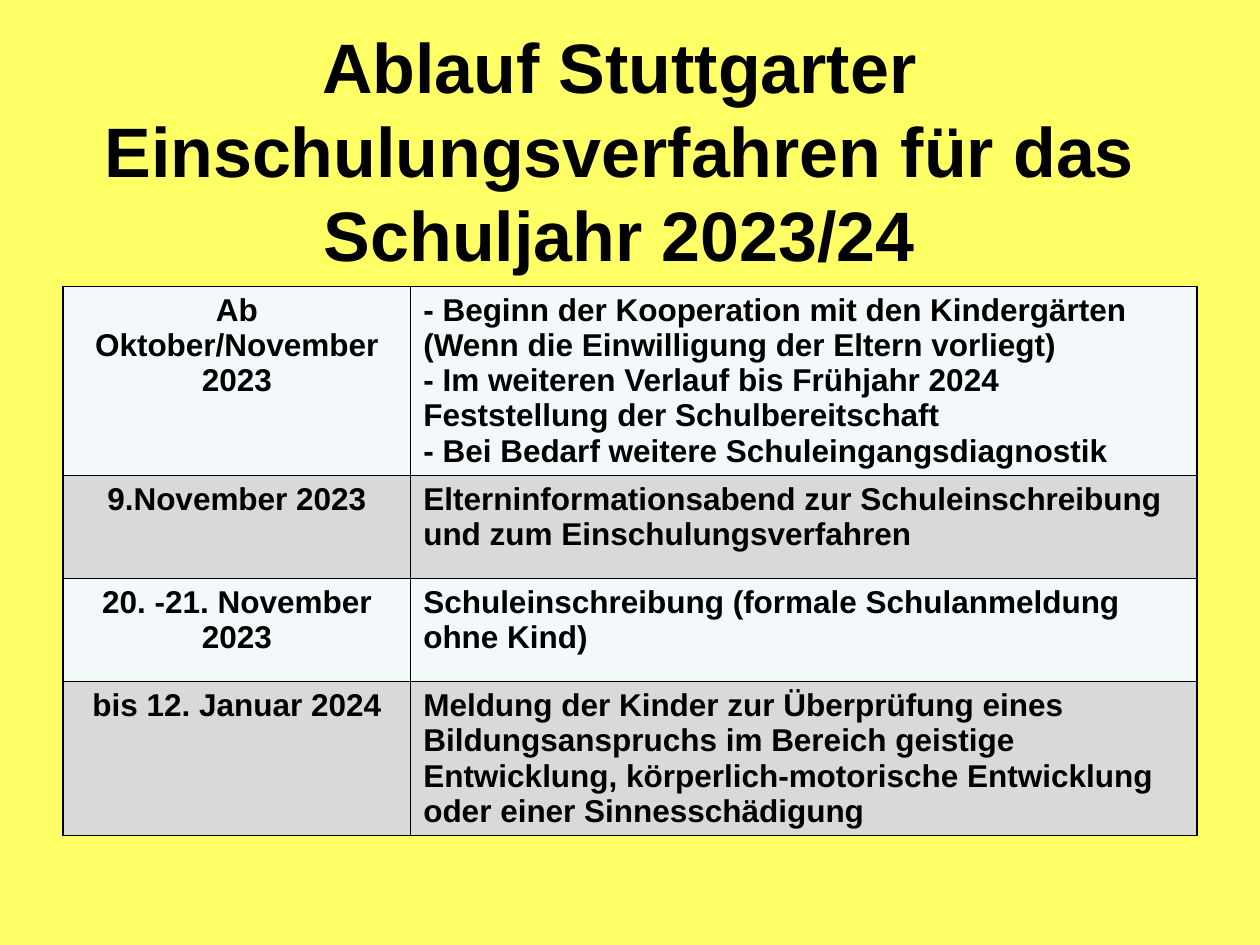
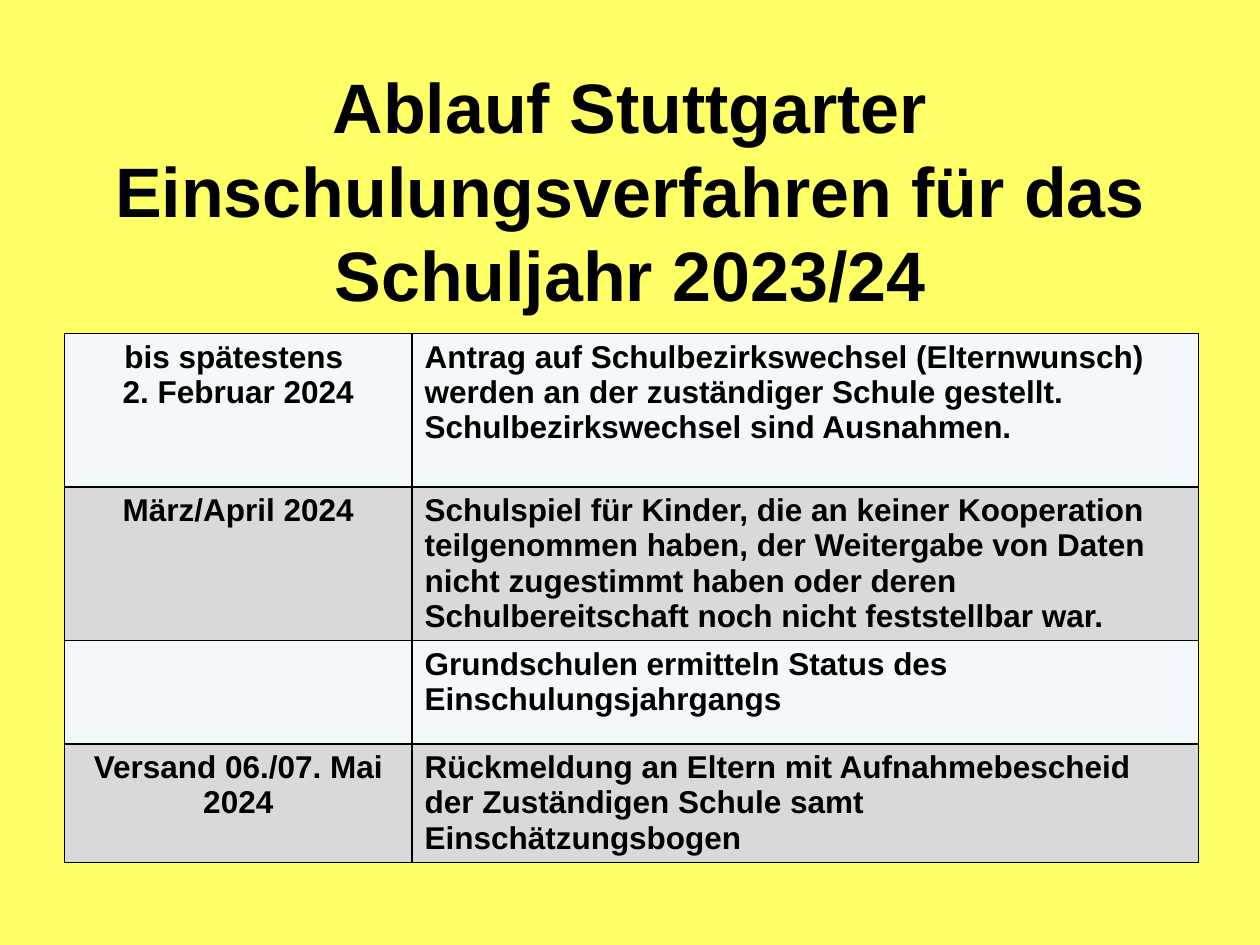
from dataclasses import dataclass

from lxml import etree
from pptx import Presentation
from pptx import util as u
from pptx.dml.color import RGBColor
from pptx.enum import text
from pptx.oxml.ns import qn


@dataclass(frozen=True)
class Theme:
    font: str = "Arial"
    background: RGBColor = RGBColor(0xFF, 0xFF, 0x66)
    ink: RGBColor = RGBColor(0, 0, 0)
    row_fills: tuple = (RGBColor(0xF3, 0xF9, 0xFA), RGBColor(0xD9, 0xD9, 0xD9))
    title_size: int = 40
    title_pitch: int = 48
    table_size: int = 18
    border: int = 1


THEME = Theme()
TITLE = "Ablauf Stuttgarter Einschulungsverfahren für das Schuljahr 2023/24"
TITLE_LEFT, TITLE_TOP, TITLE_INSET = 36, 21.6, 59
COLUMN_WIDTHS = (198.72, 449.28)
CENTER, LEFT = text.PP_ALIGN.CENTER, text.PP_ALIGN.LEFT

# Each row: height, date lines, paragraphs of the step
SCHEDULES = [
    {
        "title_size": (635.76, 72.72),
        "table_at": (36, 163.6),
        "rows": [
            (108, ["Ab Oktober/November 2023"], [
                "- Beginn der Kooperation mit den Kindergärten",
                "(Wenn die Einwilligung der Eltern vorliegt)",
                "- Im weiteren Verlauf bis Frühjahr 2024 Feststellung der Schulbereitschaft",
                "- Bei Bedarf weitere Schuleingangsdiagnostik"]),
            (59, ["9.November 2023"], [
                "Elterninformationsabend zur Schuleinschreibung und zum Einschulungsverfahren"]),
            (59, ["20. -21. November 2023"], [
                "Schuleinschreibung (formale Schulanmeldung ohne Kind)"]),
            (87.6, ["bis 12. Januar 2024"], [
                "Meldung der Kinder zur Überprüfung eines Bildungsanspruchs im Bereich geistige "
                "Entwicklung, körperlich-motorische Entwicklung oder einer Sinnesschädigung"]),
        ],
    },
    {
        "title_size": (648, 118),
        "table_at": (36.8, 190.6),
        "rows": [
            (87.6, ["bis spätestens ", "2. Februar 2024"], [
                "Antrag auf Schulbezirkswechsel (Elternwunsch) werden an der zuständiger Schule "
                "gestellt. Schulbezirkswechsel sind Ausnahmen."]),
            (87.6, ["März/April 2024"], [
                "Schulspiel für Kinder, die an keiner Kooperation teilgenommen haben, der "
                "Weitergabe von Daten nicht zugestimmt haben oder deren Schulbereitschaft noch "
                "nicht feststellbar war."]),
            (59, [], ["Grundschulen ermitteln Status des Einschulungsjahrgangs"]),
            (67.6, ["Versand 06./07. Mai 2024"], [
                "Rückmeldung an Eltern mit Aufnahmebescheid der Zuständigen Schule samt "
                "Einschätzungsbogen"]),
        ],
    },
]


def write_paragraph(paragraph, lines, size, alignment):
    """Write bold runs, one per line, with line breaks between them."""
    paragraph.alignment = alignment
    paragraph.font.size = u.Pt(size)
    for index, line in enumerate(lines):
        if index:
            paragraph.add_line_break()
        run = paragraph.add_run()
        run.text = line
        run.font.name = THEME.font
        run.font.size = u.Pt(size)
        run.font.bold = True
        run.font.color.rgb = THEME.ink


def style_cell(cell, fill):
    """Fill the cell and draw its four borders."""
    properties = cell._tc.get_or_add_tcPr()
    for side in ("a:lnL", "a:lnR", "a:lnT", "a:lnB"):
        line = etree.SubElement(properties, qn(side), w=str(u.Pt(THEME.border)))
        solid = etree.SubElement(line, qn("a:solidFill"))
        etree.SubElement(solid, qn("a:srgbClr"), val=str(THEME.ink))
    cell.fill.solid()
    cell.fill.fore_color.rgb = fill


presentation = Presentation()
presentation.slide_width, presentation.slide_height = u.Pt(720), u.Pt(540)
master_fill = presentation.slide_master.background.fill
master_fill.solid()
master_fill.fore_color.rgb = THEME.background
title_only = presentation.slide_layouts.get_by_name("Title Only")

for schedule in SCHEDULES:
    slide = presentation.slides.add_slide(title_only)

    title = slide.shapes.title
    title.left, title.top = u.Pt(TITLE_LEFT), u.Pt(TITLE_TOP)
    title.width, title.height = [u.Pt(length) for length in schedule["title_size"]]
    frame = title.text_frame
    frame.word_wrap = True
    frame.auto_size = text.MSO_AUTO_SIZE.NONE
    frame.vertical_anchor = text.MSO_ANCHOR.MIDDLE
    frame.margin_top = u.Pt(TITLE_INSET)
    write_paragraph(frame.paragraphs[0], [TITLE], THEME.title_size, CENTER)
    frame.paragraphs[0].line_spacing = u.Pt(THEME.title_pitch)

    rows = schedule["rows"]
    left, top = schedule["table_at"]
    table = slide.shapes.add_table(
        len(rows), len(COLUMN_WIDTHS), u.Pt(left), u.Pt(top),
        u.Pt(sum(COLUMN_WIDTHS)), u.Pt(sum(row[0] for row in rows))).table
    table.first_row = table.horz_banding = False
    for column, width in zip(table.columns, COLUMN_WIDTHS):
        column.width = u.Pt(width)

    for index, (height, date_lines, steps) in enumerate(rows):
        table.rows[index].height = u.Pt(height)
        date_cell, step_cell = table.rows[index].cells
        for cell in (date_cell, step_cell):
            style_cell(cell, THEME.row_fills[index % 2])
        write_paragraph(date_cell.text_frame.paragraphs[0], date_lines, THEME.table_size, CENTER)
        step_frame = step_cell.text_frame
        for number, step in enumerate(steps):
            paragraph = step_frame.add_paragraph() if number else step_frame.paragraphs[0]
            write_paragraph(paragraph, [step], THEME.table_size, LEFT)

presentation.save("out.pptx")
